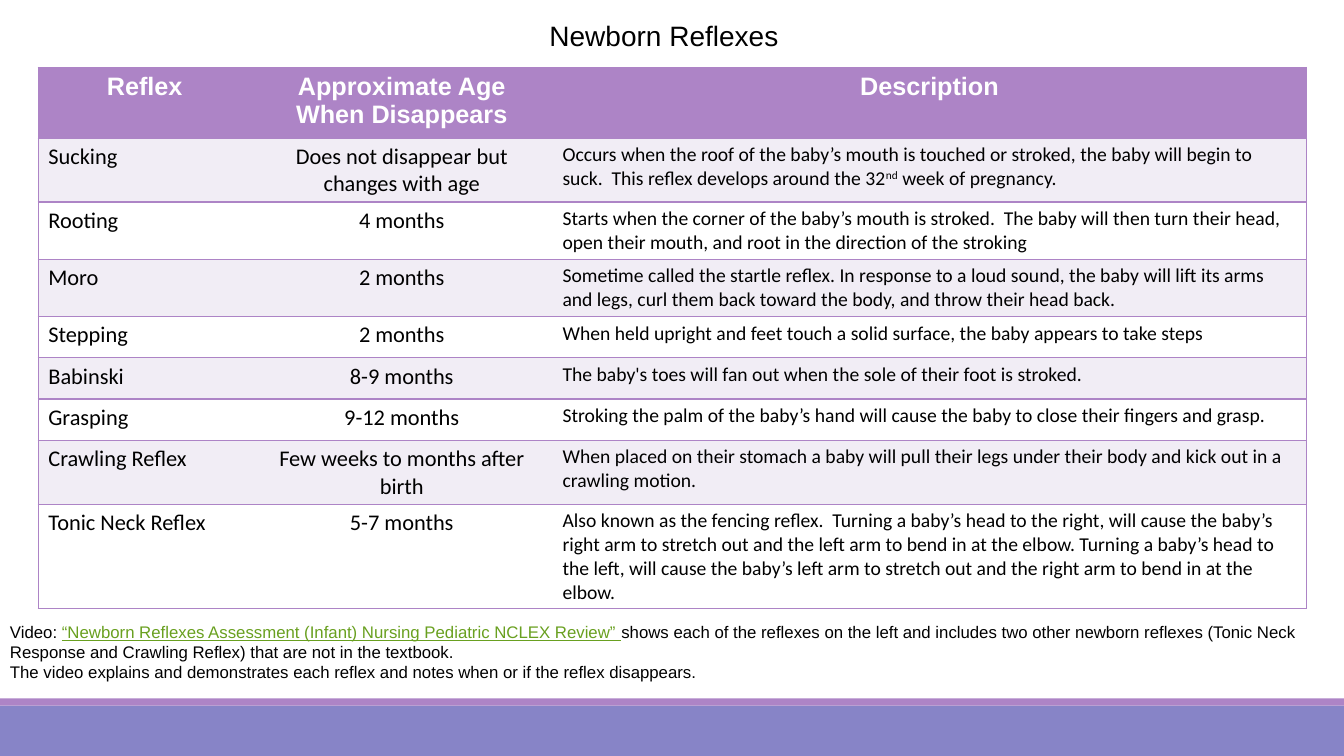
"""Build the Newborn Reflexes slide."""
from dataclasses import dataclass
from typing import Optional

from lxml.etree import SubElement
from pptx import Presentation
from pptx.dml.color import RGBColor
from pptx.enum.shapes import MSO_SHAPE
from pptx.enum.text import MSO_AUTO_SIZE, PP_ALIGN
from pptx.oxml.ns import qn
from pptx.util import Inches, Pt

BLACK = RGBColor(0x00, 0x00, 0x00)
WHITE = RGBColor(0xFF, 0xFF, 0xFF)
PURPLE = RGBColor(0xAD, 0x84, 0xC6)
PERIWINKLE = RGBColor(0x87, 0x84, 0xC7)
PALE_PURPLE = RGBColor(0xF1, 0xED, 0xF5)
GREEN = RGBColor(0x69, 0xA0, 0x20)
PLAIN_TABLE_STYLE = "{2D5ABB26-0587-4C30-8999-92F81FD0307C}"


@dataclass
class Style:
    size: int
    font: str
    color: RGBColor = BLACK
    bold: bool = False


@dataclass
class Span:
    text: str
    color: Optional[RGBColor] = None
    underline: bool = False
    superscript: bool = False


@dataclass
class Reflex:
    name: str
    age: str
    description: list[Span]


@dataclass
class Band:
    top: float
    height: float
    color: RGBColor


TITLE = Style(20, "Arial")
HEADING = Style(18, "Arial", WHITE, True)
LABEL = Style(16, "Calibri")
DETAIL = Style(14, "Calibri")
NOTE = Style(12, "Arial")

BANDS = [Band(7, 0.5, PERIWINKLE), Band(6.93, 0.07, PURPLE)]
COLUMN_WIDTHS = [2.11, 2.99, 7.48]
ROW_HEIGHT = 0.41
HEADINGS = ["Reflex", "Approximate Age When Disappears", "Description"]
REFLEXES = [
    Reflex("Sucking", "Does not disappear but changes with age", [
        Span("Occurs when the roof of the baby’s mouth is touched or stroked, the baby will "
             "begin to suck.  This reflex develops around the 32"),
        Span("nd", superscript=True),
        Span(" week of pregnancy.")]),
    Reflex("Rooting", "4 months", [
        Span("Starts when the corner of the baby’s mouth is stroked.  The baby will then turn "
             "their head, open their mouth, and root in the direction of the stroking")]),
    Reflex("Moro", "2 months", [
        Span("Sometime called the startle reflex. In response to a loud sound, the baby will lift "
             "its arms and legs, curl them back toward the body, and throw their head back.")]),
    Reflex("Stepping", "2 months", [
        Span("When held upright and feet touch a solid surface, the baby appears to take steps")]),
    Reflex("Babinski", "8-9 months", [
        Span("The baby's toes will fan out when the sole of their foot is stroked.")]),
    Reflex("Grasping", "9-12 months", [
        Span("Stroking the palm of the baby’s hand will cause the baby to close their fingers "
             "and grasp.")]),
    Reflex("Crawling Reflex", "Few weeks to months after birth", [
        Span("When placed on their stomach a baby will pull their legs under their body and kick "
             "out in a crawling motion.")]),
    Reflex("Tonic Neck Reflex", "5-7 months", [
        Span("Also known as the fencing reflex.  Turning a baby’s head to the right, will cause "
             "the baby’s right arm to stretch out and the left arm to bend in at the elbow. "
             "Turning a baby’s head to the left, will cause the baby’s left arm to stretch out "
             "and the right arm to bend in at the elbow.")]),
]
VIDEO_NOTE = [
    [Span("Video: "),
     Span("“Newborn Reflexes Assessment (Infant) Nursing Pediatric NCLEX Review” ", GREEN, True),
     Span("shows each of the reflexes on the left and includes two other newborn reflexes (Tonic "
          "Neck Response and Crawling Reflex) that are not in the textbook.")],
    [Span("The video explains and demonstrates each reflex and notes when or if the reflex "
          "disappears.")],
]


def write(para, spans: list[Span], style: Style, align=PP_ALIGN.LEFT) -> None:
    """Add the spans to a paragraph, run by run."""
    para.alignment = align
    for span in spans:
        run = para.add_run()
        run.text = span.text
        font = run.font
        font.name, font.size, font.bold = style.font, Pt(style.size), style.bold
        font.color.rgb = span.color or style.color
        font.underline = span.underline
        if span.superscript:
            run._r.get_or_add_rPr().set("baseline", "30000")


def add_band(page, band: Band, width: int) -> None:
    """Draw one full-width footer band."""
    shape = page.shapes.add_shape(
        MSO_SHAPE.RECTANGLE, 0, Inches(band.top), width, Inches(band.height))
    shape.shadow.inherit = False
    shape.fill.solid()
    shape.fill.fore_color.rgb = band.color
    shape.line.fill.background()


def add_text(page, left: float, top: float, width: float, height: float,
             paragraphs: list[list[Span]], style: Style, wrap: bool) -> None:
    """Place a text box."""
    box = page.shapes.add_textbox(Inches(left), Inches(top), Inches(width), Inches(height))
    frame = box.text_frame
    frame.word_wrap = wrap
    frame.auto_size = MSO_AUTO_SIZE.SHAPE_TO_FIT_TEXT
    for index, spans in enumerate(paragraphs):
        write(frame.add_paragraph() if index else frame.paragraphs[0], spans, style)


def add_borders(cell, sides: str) -> None:
    """Give a cell purple one-point borders on the sides named."""
    properties = cell._tc.get_or_add_tcPr()
    for side in sides:
        line = SubElement(properties, qn(f"a:ln{side}"), w=str(Pt(1)))
        SubElement(SubElement(line, qn("a:solidFill")), qn("a:srgbClr"), val=str(PURPLE))


def fill_row(row, contents: list[list[Span]], styles: list[Style],
             alignments: list, color: RGBColor) -> None:
    """Write and colour one table row."""
    row.height = Inches(ROW_HEIGHT)
    for cell, spans, style, align, sides in zip(
            row.cells, contents, styles, alignments, ["LTB", "TB", "RTB"]):
        add_borders(cell, sides)
        cell.fill.solid()
        cell.fill.fore_color.rgb = color
        write(cell.text_frame.paragraphs[0], spans, style, align)


def add_reflex_table(page) -> None:
    """Place the table of reflexes."""
    height = Inches(5.35)
    frame = page.shapes.add_table(len(REFLEXES) + 1, len(HEADINGS), Inches(0.38), Inches(0.67),
                                  Inches(sum(COLUMN_WIDTHS)), height)
    table = frame.table
    table._tbl.tblPr.find(qn("a:tableStyleId")).text = PLAIN_TABLE_STYLE
    table.horz_banding = False
    for column, width in zip(table.columns, COLUMN_WIDTHS):
        column.width = Inches(width)
    header, *body = table.rows
    fill_row(header, [[Span(text)] for text in HEADINGS], [HEADING] * 3,
             [PP_ALIGN.CENTER] * 3, PURPLE)
    for index, (row, reflex) in enumerate(zip(body, REFLEXES)):
        fill_row(row, [[Span(reflex.name)], [Span(reflex.age)], reflex.description],
                 [LABEL, LABEL, DETAIL], [PP_ALIGN.LEFT, PP_ALIGN.CENTER, PP_ALIGN.LEFT],
                 WHITE if index % 2 else PALE_PURPLE)
    frame.height = height


def main() -> None:
    """Build and save the deck."""
    deck = Presentation()
    deck.slide_width, deck.slide_height = Inches(13.33), Inches(7.5)
    page = deck.slides.add_slide(deck.slide_layouts[6])
    for band in BANDS:
        add_band(page, band, deck.slide_width)
    add_text(page, 5.35, 0.13, 2.49, 0.44, [[Span("Newborn Reflexes")]], TITLE, False)
    add_reflex_table(page)
    add_text(page, 0, 6.12, 13.22, 0.71, VIDEO_NOTE, NOTE, True)
    deck.save("out.pptx")


if __name__ == "__main__":
    main()
